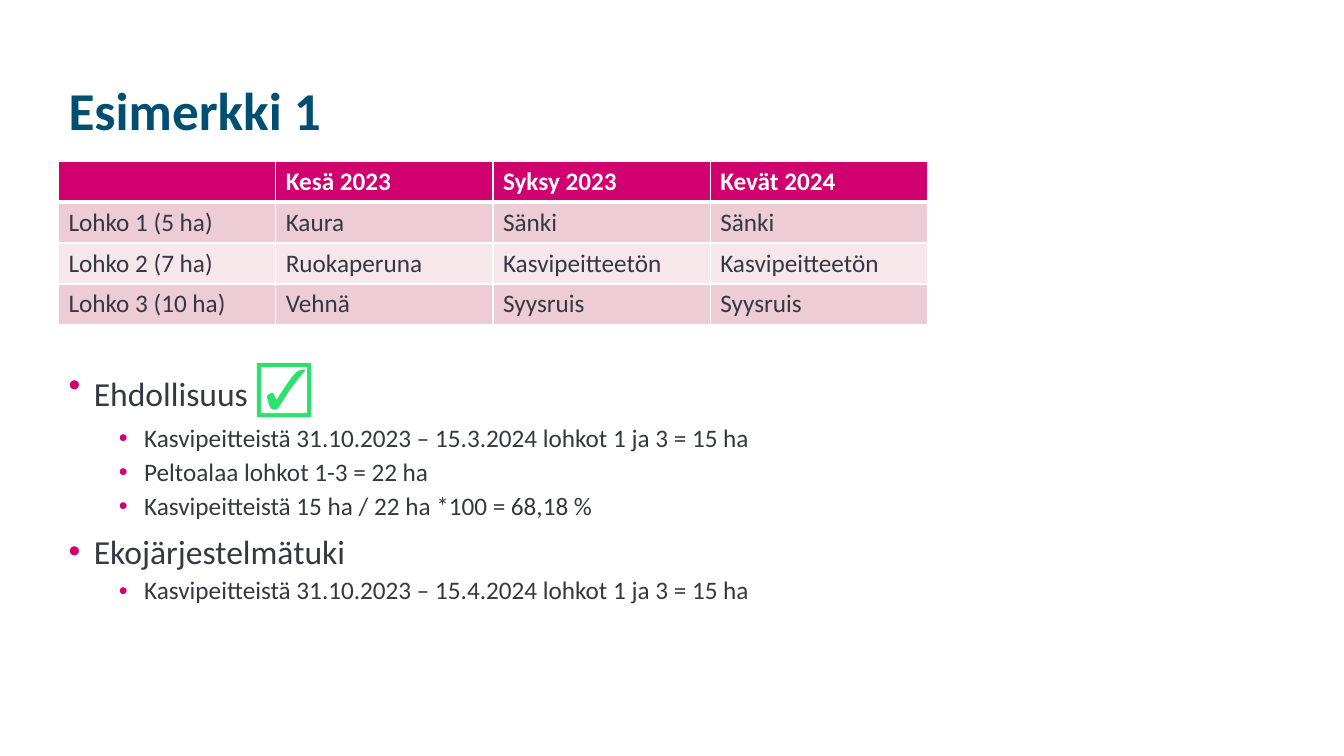
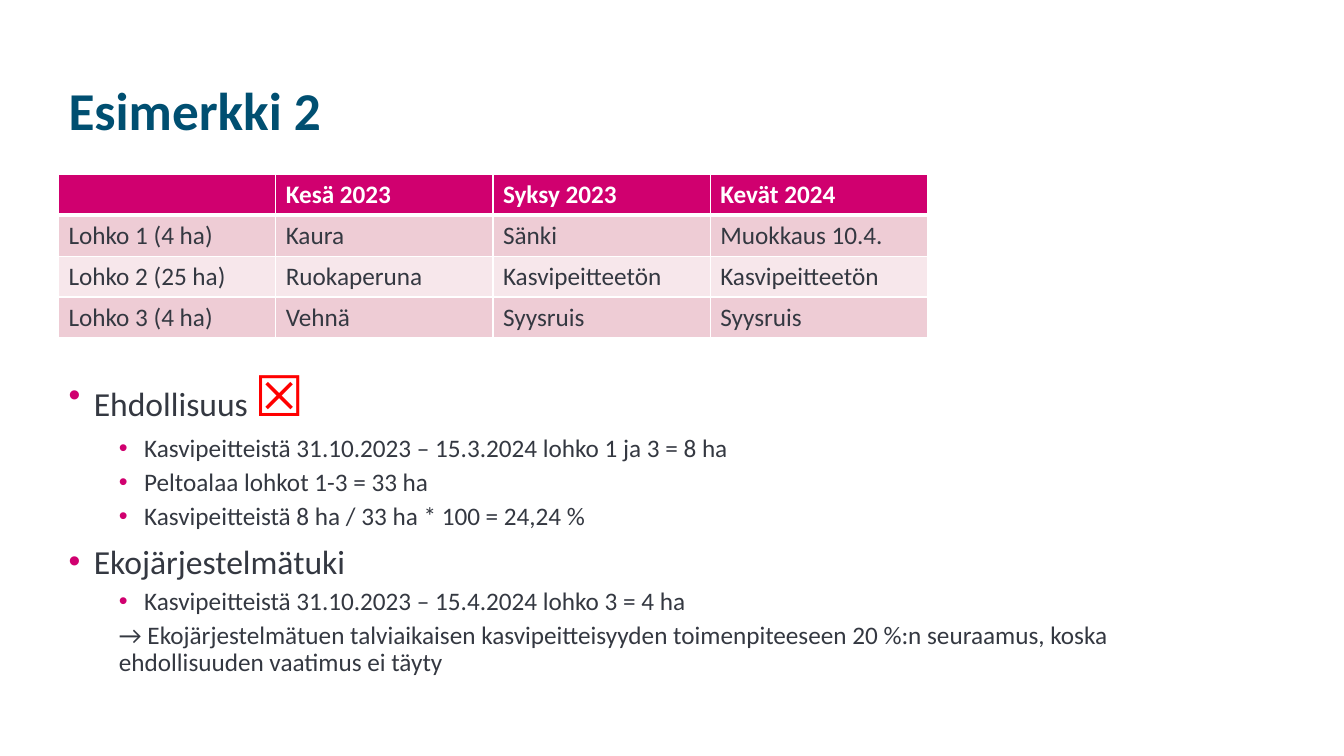
from lxml.etree import SubElement
from pptx import Presentation
from pptx.dml.color import RGBColor
from pptx.enum.text import MSO_ANCHOR, MSO_AUTO_SIZE, PP_ALIGN
from pptx.oxml.ns import qn
from pptx.util import Inches, Pt

FONT = "Calibri"
PETROL = RGBColor(0x00, 0x4F, 0x71)
MAGENTA = RGBColor(0xD0, 0x00, 0x6F)
PINK = RGBColor(0xEE, 0xCC, 0xD5)
PALE_PINK = RGBColor(0xF7, 0xE7, 0xEB)
DARK = RGBColor(0x34, 0x38, 0x41)
WHITE = RGBColor(0xFF, 0xFF, 0xFF)
GREEN = RGBColor(0x2B, 0xE2, 0x70)
RED = RGBColor(0xFF, 0x00, 0x00)

LEFT = 0.58
COLUMN_WIDTH = 2.155
ROW_HEIGHT = 0.405
SEASONS = ["", "Kesä 2023", "Syksy 2023", "Kevät 2024"]

# Kind of line: (left margin, hanging indent, space before, text size, bullet)
LINE_STYLES = {
    "heading": (0.25, -0.25, 10, 24, True),
    "item": (0.75, -0.25, 5, 18, True),
    "conclusion": (0.5, 0, 5, 18, False),
}

EXAMPLES = [
    {
        "title": "Esimerkki 1",
        "table_top": 1.6,
        "plots": [
            ["Lohko 1 (5 ha)", "Kaura", "Sänki", "Sänki"],
            ["Lohko 2 (7 ha)", "Ruokaperuna", "Kasvipeitteetön", "Kasvipeitteetön"],
            ["Lohko 3 (10 ha)", "Vehnä", "Syysruis", "Syysruis"],
        ],
        "body_box": (LEFT, 3.5, 11.5, 3.26),
        "mark": ("☑", GREEN, 26),
        "lines": [
            ("heading", "Ehdollisuus"),
            ("item", "Kasvipeitteistä 31.10.2023 – 15.3.2024 lohkot 1 ja 3 = 15 ha"),
            ("item", "Peltoalaa lohkot 1-3 = 22 ha"),
            ("item", "Kasvipeitteistä 15 ha / 22 ha *100 = 68,18 %"),
            ("heading", "Ekojärjestelmätuki"),
            ("item", "Kasvipeitteistä 31.10.2023 – 15.4.2024 lohkot 1 ja 3 = 15 ha"),
        ],
    },
    {
        "title": "Esimerkki 2",
        "table_top": 1.73,
        "plots": [
            ["Lohko 1 (4 ha)", "Kaura", "Sänki", "Muokkaus 10.4."],
            ["Lohko 2 (25 ha)", "Ruokaperuna", "Kasvipeitteetön", "Kasvipeitteetön"],
            ["Lohko 3 (4 ha)", "Vehnä", "Syysruis", "Syysruis"],
        ],
        "body_box": (LEFT, 3.6, 11.5, 3.6),
        "mark": ("☒", RED, 20),
        "lines": [
            ("heading", "Ehdollisuus"),
            ("item", "Kasvipeitteistä 31.10.2023 – 15.3.2024 lohko 1 ja 3 = 8 ha"),
            ("item", "Peltoalaa lohkot 1-3 = 33 ha"),
            ("item", "Kasvipeitteistä 8 ha / 33 ha * 100 = 24,24 %"),
            ("heading", "Ekojärjestelmätuki"),
            ("item", "Kasvipeitteistä 31.10.2023 – 15.4.2024 lohko 3 = 4 ha"),
            ("conclusion", "→ Ekojärjestelmätuen talviaikaisen kasvipeitteisyyden "
             "toimenpiteeseen 20 %:n seuraamus, koska ehdollisuuden vaatimus ei täyty"),
        ],
    },
]


def add_text(paragraph, text, size=18, color=DARK, bold=False):
    run = paragraph.add_run()
    run.text = text
    run.font.name = FONT
    run.font.size = Pt(size)
    run.font.bold = bold
    run.font.color.rgb = color


def place(shape, left, top, width, height):
    shape.left, shape.top = Inches(left), Inches(top)
    shape.width, shape.height = Inches(width), Inches(height)


def prepare_frame(shape, anchor):
    frame = shape.text_frame
    frame.word_wrap = True
    frame.auto_size = MSO_AUTO_SIZE.NONE
    frame.vertical_anchor = anchor
    return frame


def set_bullet(paragraph, margin, indent, bullet):
    properties = paragraph._p.get_or_add_pPr()
    properties.set("marL", str(Inches(margin)))
    properties.set("indent", str(Inches(indent)))
    if bullet:
        color = SubElement(properties, qn("a:buClr"))
        SubElement(color, qn("a:srgbClr"), val=str(MAGENTA))
        SubElement(properties, qn("a:buFont"), typeface="Arial")
        SubElement(properties, qn("a:buChar"), char="•")
    else:
        SubElement(properties, qn("a:buNone"))


def set_borders(cell, top=1, bottom=1):
    """Draw white borders; the fill is set afterwards to keep the XML order."""
    properties = cell._tc.get_or_add_tcPr()
    for side, width in (("L", 1), ("R", 1), ("T", top), ("B", bottom)):
        line = SubElement(properties, qn(f"a:ln{side}"), w=str(Pt(width)))
        fill = SubElement(line, qn("a:solidFill"))
        SubElement(fill, qn("a:srgbClr"), val=str(WHITE))


def fill_title(slide, text):
    title = slide.shapes.title
    place(title, LEFT, 0.4, 10.67, 1.45)
    paragraph = prepare_frame(title, MSO_ANCHOR.MIDDLE).paragraphs[0]
    paragraph.alignment = PP_ALIGN.LEFT
    paragraph.line_spacing = Pt(40)
    add_text(paragraph, text, size=38, color=PETROL, bold=True)


def add_plot_table(slide, top, plots):
    rows = [SEASONS] + plots
    columns = len(SEASONS)
    table = slide.shapes.add_table(
        len(rows), columns, Inches(LEFT), Inches(top),
        Inches(columns * COLUMN_WIDTH), Inches(len(rows) * ROW_HEIGHT)).table
    for row_index, texts in enumerate(rows):
        header = row_index == 0
        fill = MAGENTA if header else PINK if row_index % 2 else PALE_PINK
        for column_index, text in enumerate(texts):
            cell = table.cell(row_index, column_index)
            set_borders(cell, top=3 if row_index == 1 else 1, bottom=3 if header else 1)
            cell.fill.solid()
            cell.fill.fore_color.rgb = fill
            if text:
                add_text(cell.text_frame.paragraphs[0], text,
                         color=WHITE if header else DARK, bold=header)


def fill_body(slide, box, lines, mark):
    """Write the list, with the verdict mark after its first heading."""
    body = slide.placeholders[1]
    place(body, *box)
    frame = prepare_frame(body, MSO_ANCHOR.TOP)
    for index, (kind, text) in enumerate(lines):
        margin, indent, space, size, bullet = LINE_STYLES[kind]
        paragraph = frame.add_paragraph() if index else frame.paragraphs[0]
        paragraph.level = 0 if kind == "heading" else 1
        set_bullet(paragraph, margin, indent, bullet)
        paragraph.line_spacing = 0.9
        paragraph.space_before = Pt(space if index else 0)
        add_text(paragraph, text, size=size)
        if index == 0:
            symbol, color, gap_size = mark
            add_text(paragraph, " ", size=gap_size)
            add_text(paragraph, symbol, size=40, color=color, bold=True)


def add_example(presentation, example):
    slide = presentation.slides.add_slide(presentation.slide_layouts[1])
    fill_title(slide, example["title"])
    add_plot_table(slide, example["table_top"], example["plots"])
    fill_body(slide, example["body_box"], example["lines"], example["mark"])


def main():
    presentation = Presentation()
    presentation.slide_width = Inches(13.33)
    presentation.slide_height = Inches(7.5)
    for example in EXAMPLES:
        add_example(presentation, example)
    presentation.save("out.pptx")


if __name__ == "__main__":
    main()
